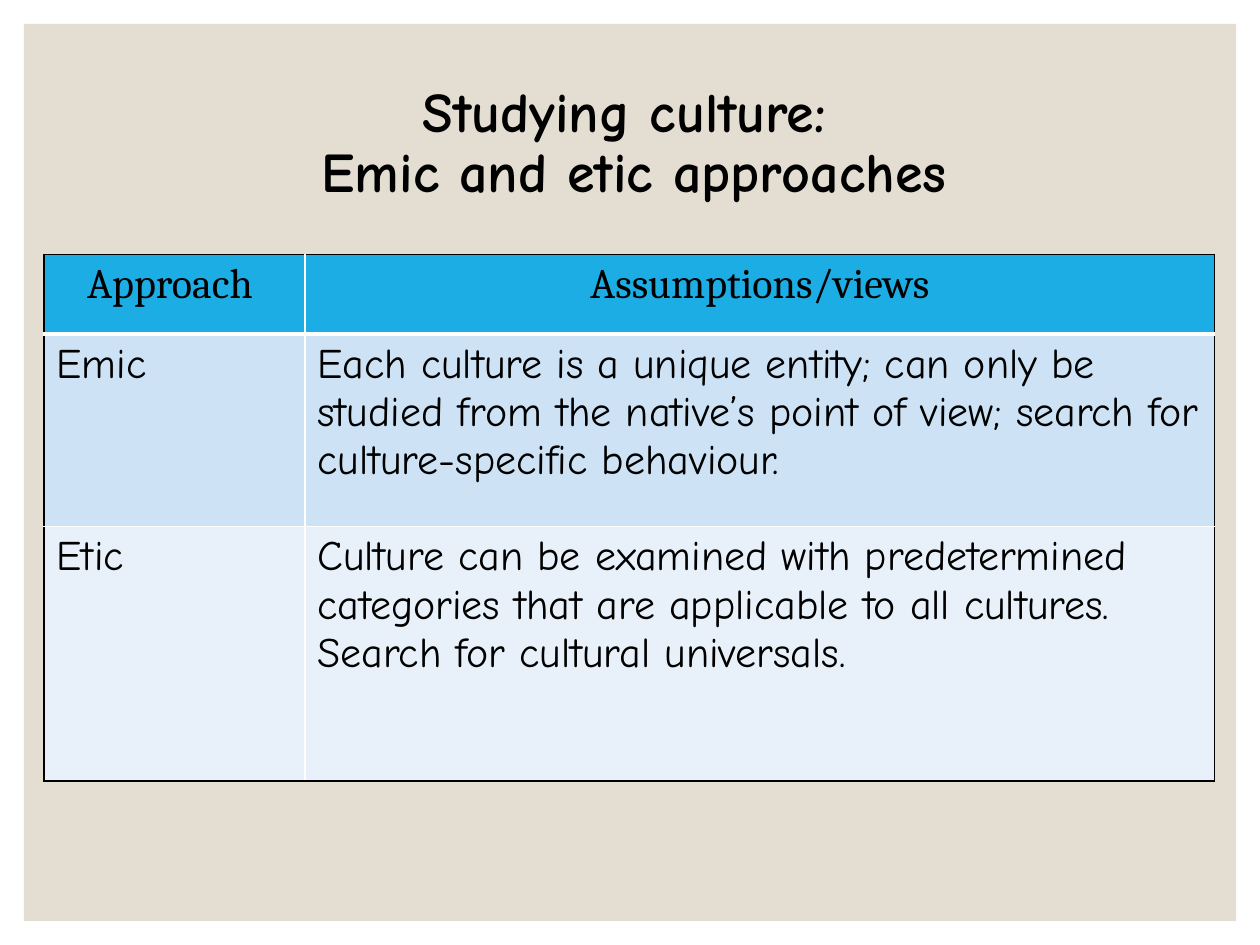
"""Build a slide comparing emic and etic approaches to studying culture."""
from dataclasses import dataclass

from lxml.etree import SubElement
from pptx import Presentation
from pptx.dml.color import RGBColor
from pptx.enum.shapes import MSO_SHAPE
from pptx.enum.text import MSO_ANCHOR, PP_ALIGN
from pptx.oxml.ns import qn
from pptx.slide import Slide
from pptx.table import _Cell
from pptx.util import Inches, Pt


@dataclass(frozen=True)
class Theme:
    panel: str = "E3DED1"
    ink: str = "000000"
    rule: str = "FFFFFF"
    header_font: str = "Cambria"
    body_font: str = "Comic Neue"
    title_size: int = 32
    table_size: int = 24


@dataclass(frozen=True)
class TableRow:
    texts: tuple[str, str]
    height: float
    fill: str
    font: str
    alignment: PP_ALIGN


@dataclass(frozen=True)
class Border:
    side: str
    color: str
    width: float


THEME = Theme()
COLUMN_WIDTHS = (2.07, 7.22)
ROWS = (
    TableRow(("Approach ", "Assumptions/views"), 0.63, "1CADE4",
             THEME.header_font, PP_ALIGN.CENTER),
    TableRow(("Emic",
              "Each culture is a unique entity; can only be studied from the native’s "
              "point of view; search for culture-specific behaviour. "),
             1.53, "CDE3F5", THEME.body_font, PP_ALIGN.LEFT),
    TableRow(("Etic",
              "Culture can be examined with predetermined categories that are "
              "applicable to all cultures. Search for cultural universals."),
             2.02, "E8F1FA", THEME.body_font, PP_ALIGN.LEFT),
)


def add_panel(slide: Slide) -> None:
    """Draw the beige panel behind the content."""
    panel = slide.shapes.add_shape(
        MSO_SHAPE.RECTANGLE, Inches(0.19), Inches(0.19), Inches(9.62), Inches(7.12))
    panel.shadow.inherit = False
    panel.fill.solid()
    panel.fill.fore_color.rgb = RGBColor.from_string(THEME.panel)
    panel.line.fill.background()


def add_title(slide: Slide, text: str) -> None:
    """Add the centred two-line title."""
    box = slide.shapes.add_textbox(Inches(0.35), Inches(0.52), Inches(9.37), Inches(1.25))
    frame = box.text_frame
    frame.word_wrap = True
    frame.vertical_anchor = MSO_ANCHOR.MIDDLE
    paragraph = frame.paragraphs[0]
    paragraph.text = text
    paragraph.alignment = PP_ALIGN.CENTER
    paragraph.line_spacing = 0.9
    paragraph.font.name = THEME.body_font
    paragraph.font.size = Pt(THEME.title_size)
    paragraph.font.bold = True
    paragraph.font.color.rgb = RGBColor.from_string(THEME.ink)


def cell_borders(row: int, column: int) -> list[Border]:
    """Give black outer edges, white inner edges and a thick rule under the header."""
    outer = {
        "lnL": column == 0,
        "lnR": column == len(COLUMN_WIDTHS) - 1,
        "lnT": row == 0,
        "lnB": row == len(ROWS) - 1,
    }
    return [Border(side, THEME.ink if is_outer else THEME.rule,
                   3 if (row, side) == (0, "lnB") else 1)
            for side, is_outer in outer.items()]


def draw_border(cell: _Cell, border: Border) -> None:
    """Append one solid border line to a cell."""
    properties = cell._tc.get_or_add_tcPr()
    line = SubElement(properties, qn(f"a:{border.side}"), w=str(Pt(border.width)))
    fill = SubElement(line, qn("a:solidFill"))
    SubElement(fill, qn("a:srgbClr"), val=border.color)


def fill_cell(cell: _Cell, text: str, row: TableRow, borders: list[Border]) -> None:
    """Write and style one table cell."""
    for border in borders:
        draw_border(cell, border)
    cell.fill.solid()
    cell.fill.fore_color.rgb = RGBColor.from_string(row.fill)
    paragraph = cell.text_frame.paragraphs[0]
    paragraph.text = text
    paragraph.alignment = row.alignment
    paragraph.font.name = row.font
    paragraph.font.size = Pt(THEME.table_size)
    paragraph.font.bold = False
    paragraph.font.color.rgb = RGBColor.from_string(THEME.ink)


def add_approach_table(slide: Slide) -> None:
    """Add the table of approaches and their assumptions."""
    table = slide.shapes.add_table(
        len(ROWS), len(COLUMN_WIDTHS), Inches(0.35), Inches(2.02),
        Inches(sum(COLUMN_WIDTHS)), Inches(sum(row.height for row in ROWS))).table
    for column, width in zip(table.columns, COLUMN_WIDTHS):
        column.width = Inches(width)
    for row_index, row in enumerate(ROWS):
        table.rows[row_index].height = Inches(row.height)
        for column_index, text in enumerate(row.texts):
            fill_cell(table.cell(row_index, column_index), text, row,
                      cell_borders(row_index, column_index))


def main() -> None:
    """Build and save the presentation."""
    presentation = Presentation()
    presentation.slide_width = Inches(10)
    presentation.slide_height = Inches(7.5)
    slide = presentation.slides.add_slide(presentation.slide_layouts[6])
    add_panel(slide)
    add_title(slide, "Studying culture: \vEmic and etic approaches")
    add_approach_table(slide)
    presentation.save("out.pptx")


if __name__ == "__main__":
    main()
